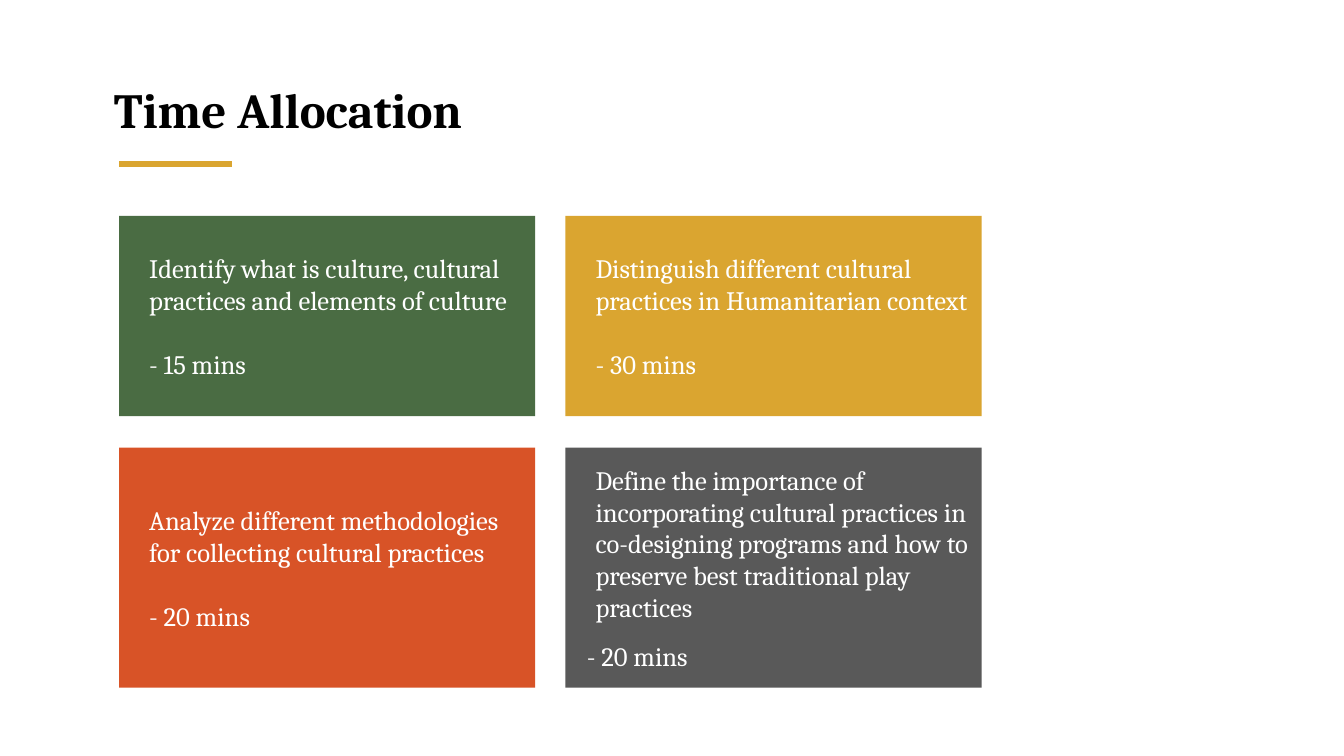
import pptx
import pptx.util
import pptx.dml.color
import pptx.enum.shapes
import pptx.enum.text
import pptx.oxml
import pptx.oxml.ns

Cm = pptx.util.Cm
Pt = pptx.util.Pt
RGBColor = pptx.dml.color.RGBColor

BLACK = RGBColor(0x00, 0x00, 0x00)
WHITE = RGBColor(0xFF, 0xFF, 0xFF)
GREEN = RGBColor(0x4A, 0x6C, 0x43)
GOLD = RGBColor(0xDA, 0xA5, 0x30)
ORANGE = RGBColor(0xD8, 0x53, 0x27)
GREY = RGBColor(0x59, 0x59, 0x59)
FONT = "Cambria"

TITLE = "Time Allocation"
# fill, objective, duration, duration indent (cm), duration space before (pt)
CARDS = [
    (GREEN, "Identify what is culture, cultural practices and elements of culture",
     "- 15 mins", 0.51, 22.7),
    (GOLD, "Distinguish different cultural practices in Humanitarian context",
     "- 30 mins", 0.51, 22.7),
    (ORANGE, "Analyze different methodologies for collecting cultural practices",
     "- 20 mins", 0.51, 22.7),
    (GREY, "Define the importance of incorporating cultural practices in "
           "co-designing programs and how to preserve best traditional play practices",
     "- 20 mins", 0.29, 12),
]

LEFT, TOP = 3.0, 5.44
CARD_W, GAP_X, GAP_Y = 10.49, 0.76, 0.79
ROW_H = [5.05, 6.05]
TEXT_INDENT = 0.51


def write(p, text, size, color, bold=False, indent=0):
    p.text = text
    p.alignment = pptx.enum.text.PP_ALIGN.LEFT
    p._p.get_or_add_pPr().set("marL", str(int(Cm(indent))))
    font = p.runs[0].font
    font.name, font.size, font.bold = FONT, Pt(size), bold
    font.color.rgb = color


def add_card(s, i, fill, objective, duration, indent, space):
    row, col = divmod(i, 2)
    x = LEFT + col * (CARD_W + GAP_X)
    y = TOP + sum(ROW_H[:row]) + row * GAP_Y
    sp = s.shapes.add_shape(pptx.enum.shapes.MSO_SHAPE.RECTANGLE,
                            Cm(x), Cm(y), Cm(CARD_W), Cm(ROW_H[row]))
    sp.shadow.inherit = False
    sp.fill.solid()
    sp.fill.fore_color.rgb = fill
    sp.line.fill.background()
    tf = sp.text_frame
    tf.word_wrap = True
    tf.vertical_anchor = pptx.enum.text.MSO_ANCHOR.MIDDLE
    write(tf.paragraphs[0], objective, 19, WHITE, indent=TEXT_INDENT)
    p = tf.add_paragraph()
    write(p, duration, 19, WHITE, indent=indent)
    p.space_before = Pt(space)


def main():
    prs = pptx.Presentation()
    prs.slide_width, prs.slide_height = Cm(33.87), Cm(19.05)
    s = prs.slides.add_slide(prs.slide_layouts[6])

    title = s.shapes.add_textbox(Cm(2.62), Cm(1.88), Cm(16.94), Cm(1.75))
    title.text_frame.word_wrap = True
    write(title.text_frame.paragraphs[0], TITLE, 35, BLACK, bold=True)

    for i, card in enumerate(CARDS):
        add_card(s, i, *card)

    rule = s.shapes.add_connector(pptx.enum.shapes.MSO_CONNECTOR.STRAIGHT,
                                  Cm(LEFT), Cm(4.14), Cm(LEFT + 2.84), Cm(4.14))
    rule.line.color.rgb = GOLD
    rule.line.width = Pt(4.5)
    rule._element.spPr.append(pptx.oxml.parse_xml(
        "<a:effectLst %s/>" % pptx.oxml.ns.nsdecls("a")))

    prs.save("out.pptx")


if __name__ == "__main__":
    main()
